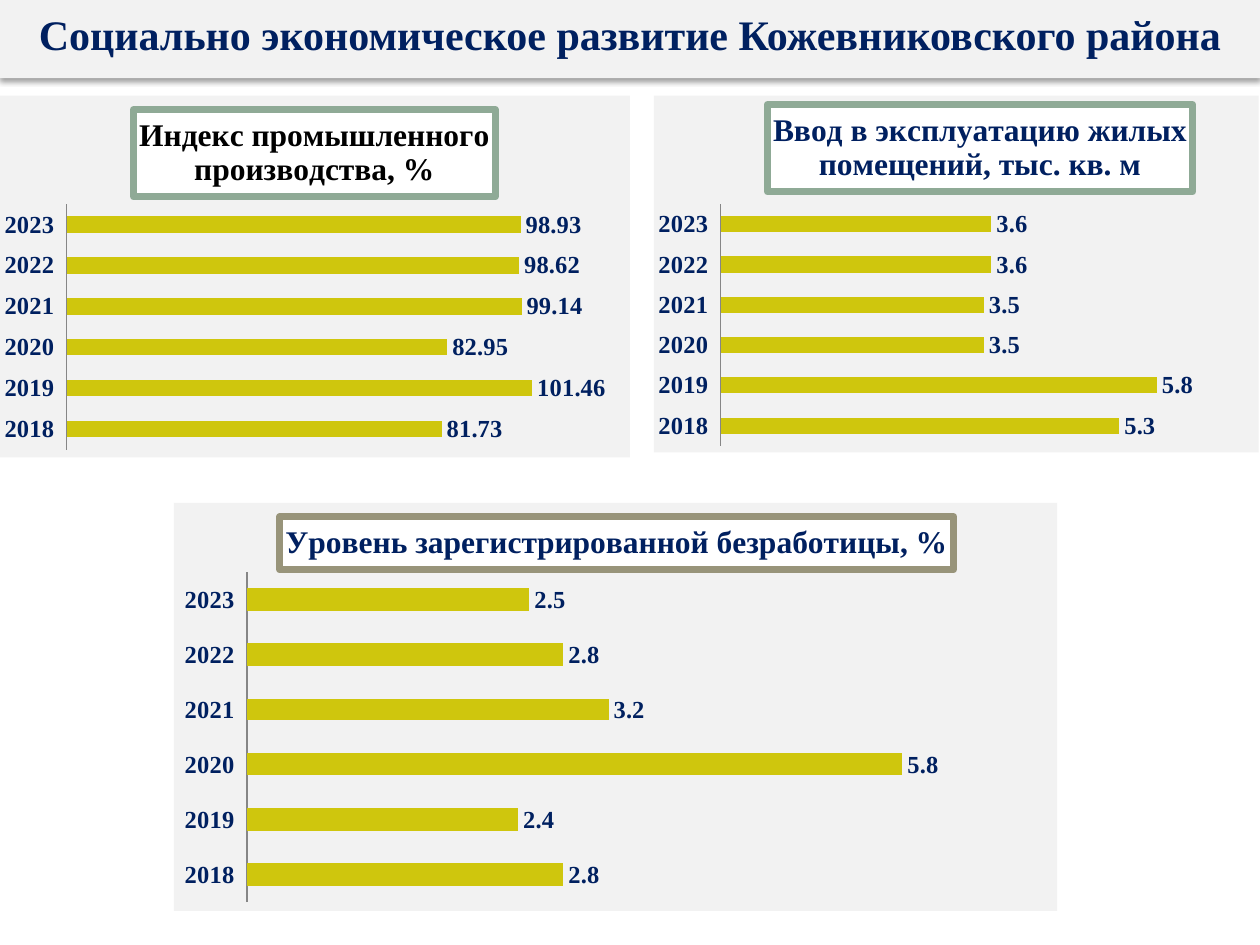
from dataclasses import dataclass

from lxml import etree
from pptx import Presentation
from pptx.chart.data import CategoryChartData
from pptx.dml.color import RGBColor
from pptx.enum.chart import XL_CHART_TYPE, XL_LABEL_POSITION, XL_TICK_LABEL_POSITION, XL_TICK_MARK
from pptx.enum.shapes import MSO_SHAPE
from pptx.enum.text import MSO_ANCHOR, PP_ALIGN
from pptx.oxml import parse_xml
from pptx.oxml.ns import nsdecls, qn
from pptx.util import Inches, Pt

BAR_CLUSTERED = XL_CHART_TYPE.BAR_CLUSTERED
OUTSIDE_END = XL_LABEL_POSITION.OUTSIDE_END
LABELS_LOW = XL_TICK_LABEL_POSITION.LOW
NO_TICK = XL_TICK_MARK.NONE
RECTANGLE = MSO_SHAPE.RECTANGLE
MIDDLE = MSO_ANCHOR.MIDDLE
CENTER = PP_ALIGN.CENTER

FONT = "Times New Roman"
COLORS = {
    "panel": "F2F2F2",
    "navy": "002060",
    "black": "000000",
    "white": "FFFFFF",
    "bar": "CFC60D",
    "axis": "868686",
    "green": "8FAA96",
    "olive": "98947A",
}
YEARS = [str(year) for year in range(2018, 2024)]


@dataclass(frozen=True)
class Panel:
    """One indicator chart, with its areas in slide inches."""

    title: str
    values: tuple[float, ...]
    maximum: float
    area: tuple[float, float, float, float]
    plot: tuple[float, float, float, float]
    title_at: tuple[float, float]
    title_color: str
    border: str
    base_font: str


PANELS = [
    Panel("Индекс промышленного производства, %",
          (81.73, 101.46, 82.95, 99.14, 98.62, 98.93), 120,
          (0, 0.76, 5, 2.87), (0.53, 1.62, 4.37, 1.95), (1.06, 0.87),
          "black", "green", FONT),
    Panel("Ввод в эксплуатацию жилых помещений, тыс. кв. м",
          (5.3, 5.8, 3.5, 3.5, 3.6, 3.6), 7,
          (5.19, 0.76, 4.8, 2.83), (5.72, 1.62, 4.18, 1.92), (6.09, 0.83),
          "navy", "green", "Calibri"),
    Panel("Уровень зарегистрированной безработицы, %",
          (2.8, 2.4, 5.8, 3.2, 2.8, 2.5), 7,
          (1.38, 3.99, 7.01, 3.24), (1.96, 4.54, 6.28, 2.62), (2.22, 4.1),
          "navy", "olive", "Calibri"),
]


def color(name: str) -> RGBColor:
    """Look up a palette colour."""
    return RGBColor.from_string(COLORS[name])


def style_font(font, size: float, color_name: str) -> None:
    """Apply the bold slide font."""
    font.name = FONT
    font.size = Pt(size)
    font.bold = True
    font.color.rgb = color(color_name)


def fill_solid(fill, color_name: str) -> None:
    """Fill with one palette colour."""
    fill.solid()
    fill.fore_color.rgb = color(color_name)


def set_layout(parent, index: int, settings: dict) -> None:
    """Give a chart part a manual layout."""
    for existing in parent.findall(qn("c:layout")):
        parent.remove(existing)
    layout = etree.Element(qn("c:layout"))
    manual = etree.SubElement(layout, qn("c:manualLayout"))
    for name, value in settings.items():
        etree.SubElement(manual, qn(f"c:{name}")).set("val", str(value))
    parent.insert(index, layout)


def add_header(slide, text: str) -> None:
    """Draw the shadowed heading band."""
    band = slide.shapes.add_shape(RECTANGLE, 0, 0, Inches(10), Inches(0.62))
    fill_solid(band.fill, "panel")
    band.line.fill.background()
    band._element.spPr.append(parse_xml(
        f'<a:effectLst {nsdecls("a")}><a:outerShdw blurRad="{Pt(3.1)}" dist="{Pt(2)}" '
        f'dir="5400000" algn="t" rotWithShape="0"><a:srgbClr val="{COLORS["black"]}">'
        '<a:alpha val="38000"/></a:srgbClr></a:outerShdw></a:effectLst>'))
    frame = band.text_frame
    frame.word_wrap = True
    frame.vertical_anchor = MIDDLE
    frame.margin_bottom = Inches(0.13)
    para = frame.paragraphs[0]
    para.text = text
    para.alignment = CENTER
    style_font(para.font, 24, "navy")


def add_title(chart, panel: Panel) -> None:
    """Draw the framed chart title."""
    title = chart.chart_title
    para = title.text_frame.paragraphs[0]
    para.text = panel.title
    style_font(para.font, 18, panel.title_color)
    fill_solid(title.format.fill, "white")
    title.format.line.color.rgb = color(panel.border)
    title.format.line.width = Pt(4)
    left, top, width, height = panel.area
    x, y = panel.title_at
    set_layout(title._element, 1, {
        "xMode": "edge", "yMode": "edge",
        "x": (x - left) / width, "y": (y - top) / height})


def style_axes(chart, maximum: float) -> None:
    """Style the year axis and hide the value axis."""
    years = chart.category_axis
    years.major_tick_mark = NO_TICK
    years.minor_tick_mark = NO_TICK
    years.tick_label_position = LABELS_LOW
    years.format.line.color.rgb = color("axis")
    style_font(years.tick_labels.font, 14, "navy")
    scale = chart.value_axis
    scale.minimum_scale = 0
    scale.maximum_scale = maximum
    scale.has_major_gridlines = False
    scale.visible = False


def add_panel(slide, panel: Panel) -> None:
    """Draw one indicator chart."""
    data = CategoryChartData()
    data.categories = YEARS
    data.add_series("Series 1", panel.values)
    chart = slide.shapes.add_chart(BAR_CLUSTERED, *map(Inches, panel.area), data).chart
    chart.has_legend = False
    chart.font.size = Pt(10)
    chart.font.name = panel.base_font
    chart.font.color.rgb = color("black")
    add_title(chart, panel)
    style_axes(chart, panel.maximum)

    plot = chart.plots[0]
    plot.gap_width = 150
    plot.vary_by_categories = False
    fill_solid(plot.series[0].format.fill, "bar")
    plot.has_data_labels = True
    labels = plot.data_labels
    labels.show_value = True
    labels.position = OUTSIDE_END
    style_font(labels.font, 14, "navy")

    left, top, width, height = panel.area
    x, y, plot_width, plot_height = panel.plot
    space = chart._chartSpace
    set_layout(space.chart.plotArea, 0, {
        "layoutTarget": "inner", "xMode": "edge", "yMode": "edge",
        "x": (x - left) / width, "y": (y - top) / height,
        "w": plot_width / width, "h": plot_height / height})
    space.chart.addnext(parse_xml(
        f'<c:spPr {nsdecls("c", "a")}><a:solidFill><a:srgbClr val="{COLORS["panel"]}"/>'
        '</a:solidFill><a:ln><a:noFill/></a:ln></c:spPr>'))


def main() -> None:
    """Build the district development slide."""
    deck = Presentation()
    deck.slide_width = Inches(10)
    deck.slide_height = Inches(7.5)
    slide = deck.slides.add_slide(deck.slide_layouts[6])
    add_header(slide, "Социально экономическое развитие Кожевниковского района")
    for panel in PANELS:
        add_panel(slide, panel)
    deck.save("out.pptx")


if __name__ == "__main__":
    main()
